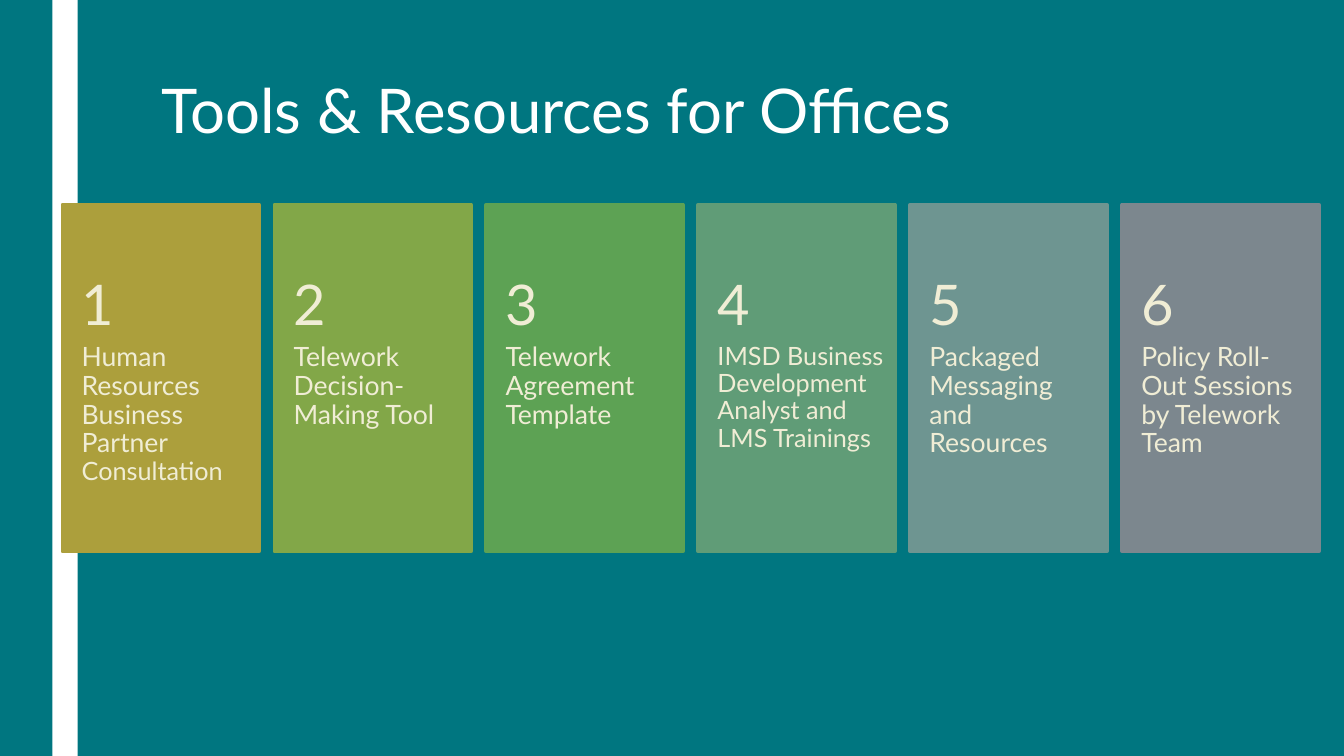
from pptx import Presentation
from pptx.dml.color import RGBColor
from pptx.enum.shapes import MSO_SHAPE
from pptx.enum.text import MSO_ANCHOR, PP_ALIGN
from pptx.util import Inches, Pt

RECTANGLE = MSO_SHAPE.RECTANGLE
TOP, MIDDLE = MSO_ANCHOR.TOP, MSO_ANCHOR.MIDDLE
LEFT = PP_ALIGN.LEFT

# Content: card colour, right inset, runs of (text, size)
TITLE = "Tools & Resources for Offices"
CARDS = [
    (RGBColor(0xAC, 0x9F, 0x3C), 0.1,
     [("Human Resources Business Partner ", 19), ("Consultation", 18)]),
    (RGBColor(0x82, 0xA7, 0x48), 0.19, [("Telework Decision-Making Tool", 19)]),
    (RGBColor(0x5D, 0xA2, 0x54), 0.19, [("Telework Agreement Template", 19)]),
    (RGBColor(0x60, 0x9C, 0x77), 0.1,
     [("IMSD Business Development Analyst and LMS Trainings", 18)]),
    (RGBColor(0x6E, 0x95, 0x91), 0.19, [("Packaged Messaging and Resources", 19)]),
    (RGBColor(0x7C, 0x87, 0x8E), 0.19,
     [("Policy Roll-Out Sessions by Telework Team", 19)]),
]

# Style and layout, in inches
FONT = "Lato"
TEAL = RGBColor(0x00, 0x76, 0x80)
WHITE = RGBColor(0xFF, 0xFF, 0xFF)
CREAM = RGBColor(0xF0, 0xED, 0xD5)
FIRST_LEFT, LAST_LEFT = 0.62, 11.13
CARD_TOP, CARD_WIDTH, CARD_HEIGHT = 2.03, 1.95, 3.44
NUMBER_TOP, NUMBER_HEIGHT = 2.58, 0.93
LABEL_TOP, LABEL_HEIGHT = 3.41, 2.06


def write_text(holder, runs, color=CREAM, spacing=0.9, anchor=TOP,
               insets=(0.1, 0.05, 0.1, 0.05)):
    """Fill a text holder with one paragraph of (text, size) runs."""
    frame = holder.text_frame
    frame.word_wrap = True
    frame.vertical_anchor = anchor
    (frame.margin_left, frame.margin_top,
     frame.margin_right, frame.margin_bottom) = map(Inches, insets)
    paragraph = frame.paragraphs[0]
    paragraph.alignment = LEFT
    paragraph.line_spacing = spacing
    for text, size in runs:
        run = paragraph.add_run()
        run.text = text
        run.font.name = FONT
        run.font.size = Pt(size)
        run.font.color.rgb = color


def add_block(slide, box, color):
    block = slide.shapes.add_shape(RECTANGLE, *map(Inches, box))
    block.shadow.inherit = False
    block.fill.solid()
    block.fill.fore_color.rgb = color
    block.line.fill.background()
    return block


def main():
    deck = Presentation()
    deck.slide_width, deck.slide_height = Inches(13.33), Inches(7.5)
    slide = deck.slides.add_slide(deck.slide_layouts[5])
    slide.background.fill.solid()
    slide.background.fill.fore_color.rgb = TEAL

    # Side stripe and title
    add_block(slide, (0.52, 0, 0.25, 7.5), WHITE)
    title = slide.shapes.title
    title.left, title.top = Inches(1.5), Inches(0.75)
    title.width, title.height = Inches(10.5), Inches(1.62)
    write_text(title, [(TITLE, 44)], color=WHITE, spacing=0.89)

    # Numbered cards
    pitch = (LAST_LEFT - FIRST_LEFT) / (len(CARDS) - 1)
    for index, (color, right_inset, label_runs) in enumerate(CARDS):
        left = FIRST_LEFT + index * pitch
        card = add_block(slide, (left, CARD_TOP, CARD_WIDTH, CARD_HEIGHT), color)
        card.line.color.rgb = color
        card.line.width = Pt(2.75)

        label = slide.shapes.add_textbox(
            *map(Inches, (left, LABEL_TOP, CARD_WIDTH, LABEL_HEIGHT)))
        write_text(label, label_runs, insets=(0.19, 0, right_inset, 0.36))

        number = slide.shapes.add_textbox(
            *map(Inches, (left, NUMBER_TOP, CARD_WIDTH, NUMBER_HEIGHT)))
        write_text(number, [(str(index + 1), 40)], anchor=MIDDLE,
                   insets=(0.19, 0.18, 0.19, 0.18))

    deck.save("out.pptx")


if __name__ == "__main__":
    main()
